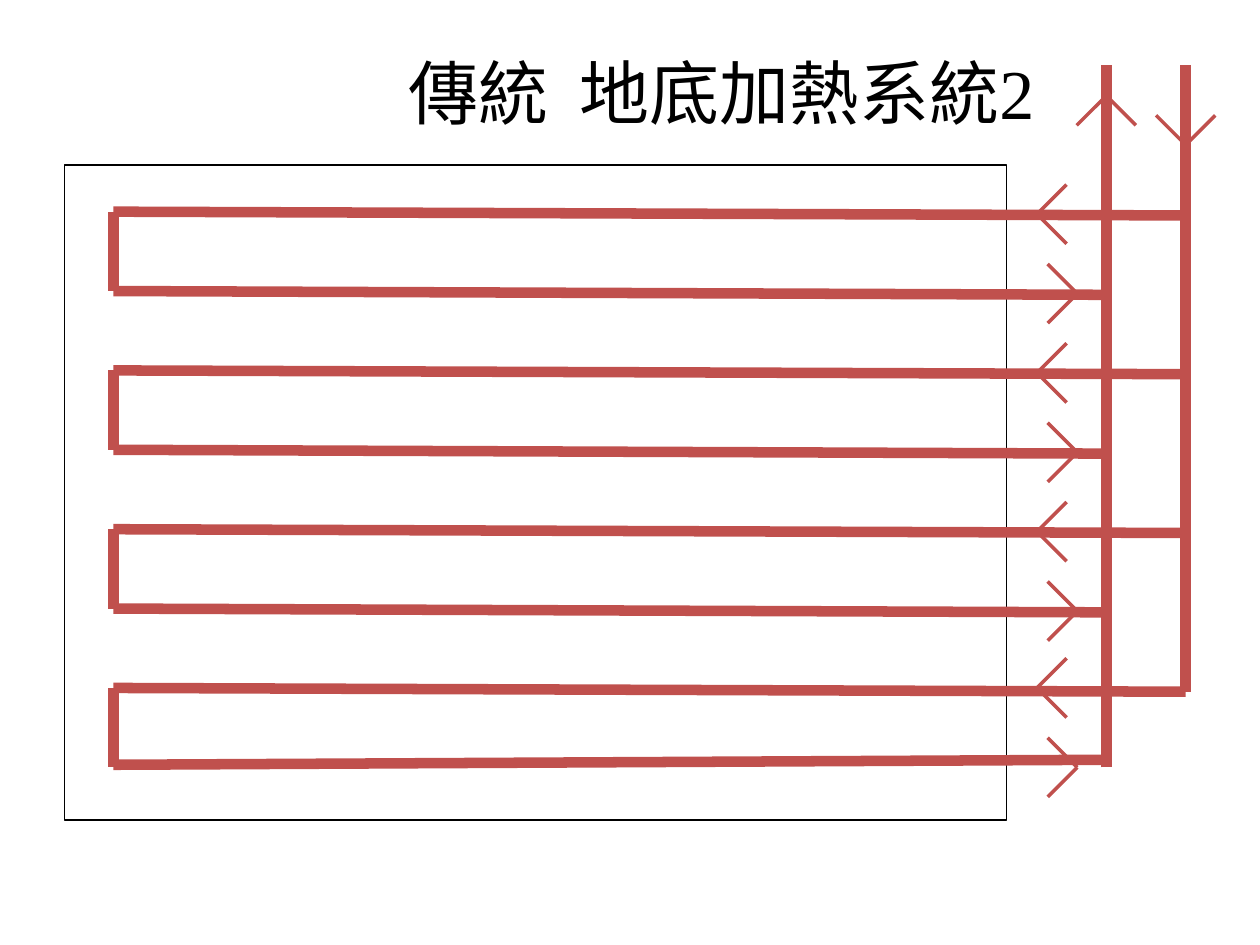
from lxml import etree
from pptx import Presentation, util as u
from pptx.dml.color import RGBColor
from pptx.enum import shapes, text
from pptx.oxml import ns

PIPE_COLOUR = "C0504D"
PIPE_WIDTH, ARROW_WIDTH = 6, 2
LOOPS = 4
FIRST_ROW, ROW_HEIGHT = 1.68, 0.63
BEND_X, RETURN_X, SUPPLY_X = 0.9, 8.78, 9.41
RISER_TOP = 0.52
SLOPE = 0.03
ARM = 0.235


def colour(hex_string):
    return RGBColor.from_string(hex_string)


def row_y(row):
    """Height of a pipe row; each loop takes two rows."""
    return FIRST_ROW + row * ROW_HEIGHT


def add_line(slide, start, end, width):
    points = [u.Inches(value) for value in (*start, *end)]
    line = slide.shapes.add_connector(shapes.MSO_CONNECTOR.STRAIGHT, *points)
    line.line.color.rgb = colour(PIPE_COLOUR)
    line.line.width = u.Pt(width)
    etree.SubElement(line._element.spPr, ns.qn("a:effectLst"))


def add_flow_arrow(slide, tip, direction):
    """Draw an open arrowhead at tip, pointing along a unit (x, y) direction."""
    x, y = tip
    dx, dy = direction
    for side in (-1, 1):
        tail = (x - ARM * (dx + side * dy), y - ARM * (dy - side * dx))
        add_line(slide, tail, tip, ARROW_WIDTH)


def add_loop(slide, index):
    top, bottom = row_y(2 * index), row_y(2 * index + 1)
    last = index == LOOPS - 1
    return_start = (BEND_X, bottom - (0.02 if last else 0))
    return_end = (RETURN_X, bottom + (-0.06 if last else SLOPE))
    add_line(slide, (SUPPLY_X, top + SLOPE), (BEND_X, top), PIPE_WIDTH)
    add_line(slide, (BEND_X, top), (BEND_X, bottom), PIPE_WIDTH)
    add_line(slide, return_end, return_start, PIPE_WIDTH)
    arrow_drop = 0 if last else 0.02
    add_flow_arrow(slide, (8.23, top + arrow_drop), (-1, 0))
    add_flow_arrow(slide, (8.55, bottom + arrow_drop), (1, 0))


def add_risers(slide):
    supply_bottom = row_y(2 * LOOPS - 2) + SLOPE
    return_bottom = row_y(2 * LOOPS - 1)
    add_line(slide, (SUPPLY_X, supply_bottom), (SUPPLY_X, RISER_TOP), PIPE_WIDTH)
    add_line(slide, (RETURN_X, return_bottom), (RETURN_X, RISER_TOP), PIPE_WIDTH)
    add_flow_arrow(slide, (SUPPLY_X, 1.15), (0, 1))
    add_flow_arrow(slide, (RETURN_X, 0.76), (0, -1))


def add_room(slide):
    box = [u.Inches(value) for value in (0.51, 1.31, 7.48, 5.2)]
    room = slide.shapes.add_shape(shapes.MSO_SHAPE.RECTANGLE, *box)
    room.shadow.inherit = False
    room.fill.background()
    room.line.color.rgb = colour("000000")
    room.line.width = u.Pt(0.75)


def add_title(slide, wording):
    box = [u.Inches(value) for value in (1.95, 0.3, 7.55, 0.85)]
    frame = slide.shapes.add_textbox(*box).text_frame
    frame.word_wrap = True
    frame.vertical_anchor = text.MSO_ANCHOR.MIDDLE
    paragraph = frame.paragraphs[0]
    paragraph.text = wording
    paragraph.alignment = text.PP_ALIGN.CENTER
    paragraph.font.name = "Times New Roman"
    paragraph.font.size = u.Pt(40)
    paragraph.font.color.rgb = colour("000000")


def main():
    presentation = Presentation()
    presentation.slide_width = u.Inches(10)
    presentation.slide_height = u.Inches(7.5)
    slide = presentation.slides.add_slide(presentation.slide_layouts[6])
    add_room(slide)
    for index in range(LOOPS):
        add_loop(slide, index)
    add_risers(slide)
    add_title(slide, "傳統  地底加熱系統2")
    presentation.save("out.pptx")


if __name__ == "__main__":
    main()
